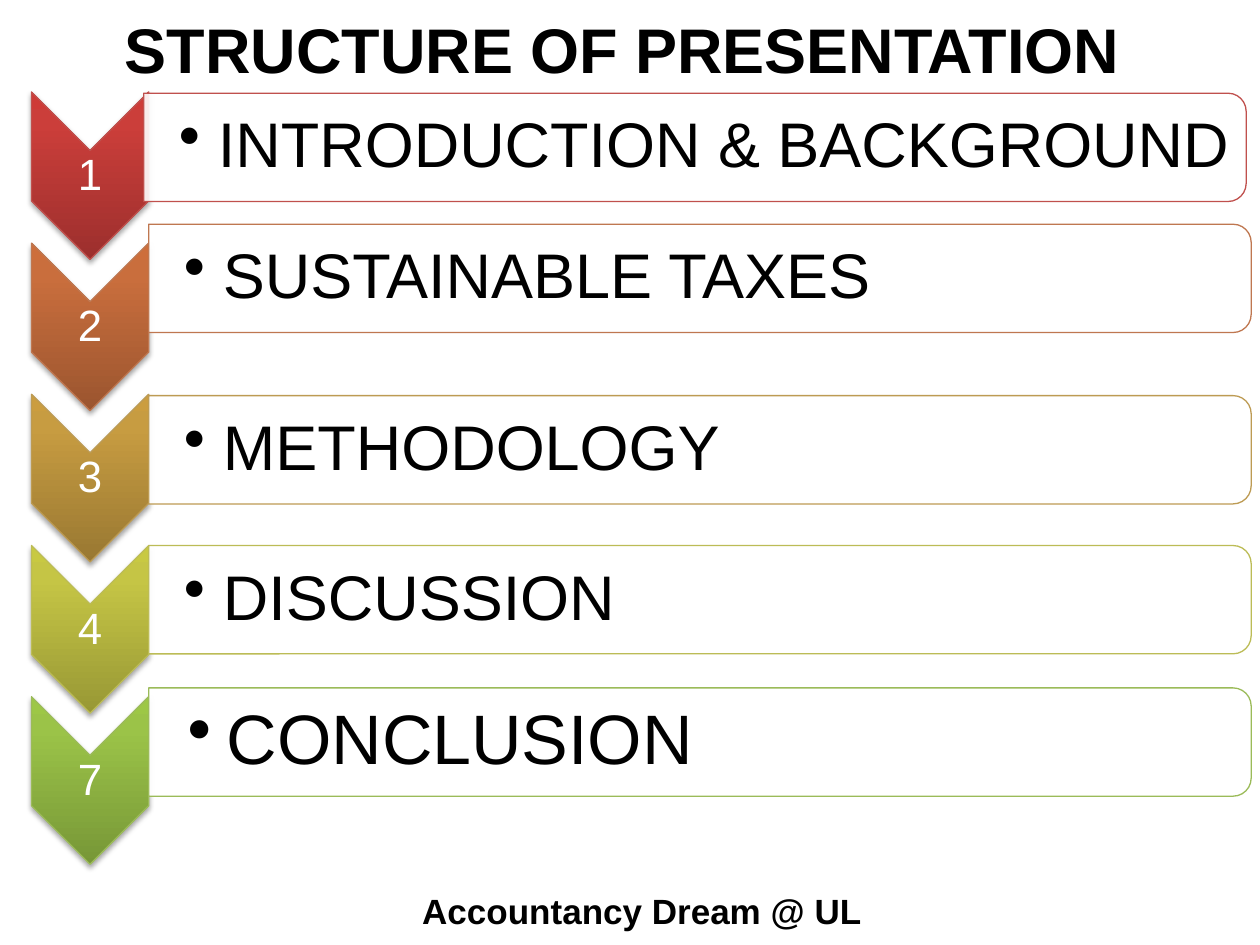
import pptx
import pptx.dml.color
import pptx.enum.shapes
import pptx.enum.text
import pptx.oxml
import pptx.oxml.ns
import pptx.util

Pt = pptx.util.Pt
Kind = pptx.enum.shapes.MSO_SHAPE
Align = pptx.enum.text.PP_ALIGN
Anchor = pptx.enum.text.MSO_ANCHOR
NS = pptx.oxml.ns.nsdecls("a")

INK = {"black": "000000", "white": "FFFFFF"}
HUES = {
    "red": ("C0504D", "9C2F2D", "CB3E3A", "CE3B37"),
    "rust": ("BF7750", "9B552F", "C96E3D", "CD6E3B"),
    "gold": ("BD9B53", "997832", "C79C41", "CB9D3F"),
    "lime": ("BCBC56", "989835", "C5C545", "C8C942"),
    "green": ("9BBB59", "779737", "9BC348", "9DC746"),
}
STEPS = [
    ("1", "INTRODUCTION & BACKGROUND", "red", 11.4, 7.4, 36, 0.28),
    ("2", "SUSTAINABLE TAXES", "rust", 11.8, 17.8, 36, 0.28),
    ("3", "METHODOLOGY", "gold", 11.8, 31.4, 36, 0.28),
    ("4", "DISCUSSION", "lime", 11.8, 43.3, 36, 0.28),
    ("7", "CONCLUSION", "green", 11.8, 54.6, 40, 0.31),
]


class Deck:
    """Slide style and element methods on a grid of 100 columns by 75 rows."""

    face = "Arial"
    cols, rows = 100, 75

    def __init__(self):
        """Open a presentation with one title slide."""
        self.prs = pptx.Presentation()
        self.prs.slide_width = pptx.util.Inches(10)
        self.prs.slide_height = pptx.util.Inches(7.5)
        self.slide = self.prs.slides.add_slide(self.prs.slide_layouts[5])

    def box(self, x, y, w, h):
        """Turn grid units into slide lengths."""
        col = self.prs.slide_width / self.cols
        row = self.prs.slide_height / self.rows
        return [int(n * unit) for n, unit in zip((x, y, w, h), (col, row, col, row))]

    def words(self, frame, text, size, ink="black", bold=False, align=Align.CENTER):
        """Fill a frame with one styled paragraph and return it."""
        frame.word_wrap = True
        para = frame.paragraphs[0]
        para.text = text
        para.alignment = align
        if align == Align.LEFT:
            props = para._p.get_or_add_pPr()
            indent = pptx.util.Inches(0.31)
            props.set("marL", str(indent))
            props.set("indent", str(-indent))
            props.append(pptx.oxml.parse_xml(f'<a:buChar {NS} char="•"/>'))
        font = para.font
        font.name, font.size, font.bold = self.face, Pt(size), bold
        font.color.rgb = pptx.dml.color.RGBColor.from_string(INK[ink])
        return para

    def title(self, text, *area):
        """Place the slide title."""
        shape = self.slide.shapes.title
        shape.left, shape.top, shape.width, shape.height = self.box(*area)
        shape.text_frame.vertical_anchor = Anchor.MIDDLE
        self.words(shape.text_frame, text, 36, bold=True)

    def label(self, text, area, size, pads, after, **look):
        """Add tight, vertically centred text."""
        frame = self.slide.shapes.add_textbox(*self.box(*area)).text_frame
        frame.vertical_anchor = Anchor.MIDDLE
        frame.margin_left, frame.margin_top, frame.margin_right, frame.margin_bottom = (
            pptx.util.Inches(pad) for pad in pads)
        para = self.words(frame, text, size, **look)
        para.line_spacing = 0.9
        para.space_after = Pt(size * after)

    def turn(self, kind, x, y, w, h, hue):
        """Add a preset turned a quarter so that it covers the given area."""
        mid, half = x + w / 2, y + h / 2
        shape = self.slide.shapes.add_shape(
            kind, *self.box(mid - h / 2, half - w / 2, h, w))
        shape.rotation = 90
        shape.shadow.inherit = False
        shape.line.color.rgb = pptx.dml.color.RGBColor.from_string(HUES[hue][0])
        shape.line.width = Pt(0.75)
        return shape

    def arrow(self, x, y, w, h, hue):
        """Add a shaded chevron pointing down."""
        shape = self.turn(Kind.CHEVRON, x, y, w, h, hue)
        stops = "".join(
            f'<a:gs pos="{at * 1000}"><a:srgbClr val="{tone}"/></a:gs>'
            for at, tone in zip((0, 80, 100), HUES[hue][1:]))
        props = shape._element.spPr
        props.find(pptx.oxml.ns.qn("a:prstGeom")).addnext(pptx.oxml.parse_xml(
            f'<a:gradFill {NS} rotWithShape="0"><a:gsLst>{stops}</a:gsLst>'
            '<a:lin ang="16200000" scaled="0"/></a:gradFill>'))
        props.find(pptx.oxml.ns.qn("a:effectLst")).append(pptx.oxml.parse_xml(
            f'<a:outerShdw {NS} blurRad="{Pt(3.1)}" dist="{Pt(1.8)}" dir="5400000" '
            'rotWithShape="0"><a:srgbClr val="000000"><a:alpha val="35000"/>'
            '</a:srgbClr></a:outerShdw>'))

    def panel(self, x, y, w, h, hue):
        """Add a white panel with rounded right corners."""
        shape = self.turn(Kind.ROUND_2_SAME_RECTANGLE, x, y, w, h, hue)
        shape.fill.solid()
        shape.fill.fore_color.rgb = pptx.dml.color.RGBColor.from_string(INK["white"])
        tone = shape._element.spPr.find(pptx.oxml.ns.qn("a:solidFill"))[0]
        tone.append(pptx.oxml.parse_xml(f'<a:alpha {NS} val="90000"/>'))

    def step(self, rank, mark, text, hue, x, y, size, pad):
        """Add a numbered chevron with its panel."""
        top = 7.3 + 12 * rank
        self.arrow(2.5, top, 9.3, 13.3, hue)
        self.label(mark, (2.5, top + 4.7, 9.3, 4), 25, [0.02] * 4, 0.35, ink="white")
        self.panel(x, y, 87.5, 8.6, hue)
        self.label(text, (x, y + 0.4, 87.1, 7.8), size, (pad, 0.03, 0.03, 0.03),
                   0.15, align=Align.LEFT)

    def foot(self, text, *area):
        """Add the closing line."""
        frame = self.slide.shapes.add_textbox(*self.box(*area)).text_frame
        self.words(frame, text, 20, bold=True)
        frame.auto_size = pptx.enum.text.MSO_AUTO_SIZE.SHAPE_TO_FIT_TEXT


def main():
    """Build and save the slide."""
    deck = Deck()
    deck.title("STRUCTURE OF PRESENTATION", 0, 0, 98.8, 7.6)
    for rank, step in enumerate(STEPS):
        deck.step(rank, *step)
    deck.foot("Accountancy Dream @ UL", 2, 70.1, 97.9, 4.4)
    deck.prs.save("out.pptx")


if __name__ == "__main__":
    main()
